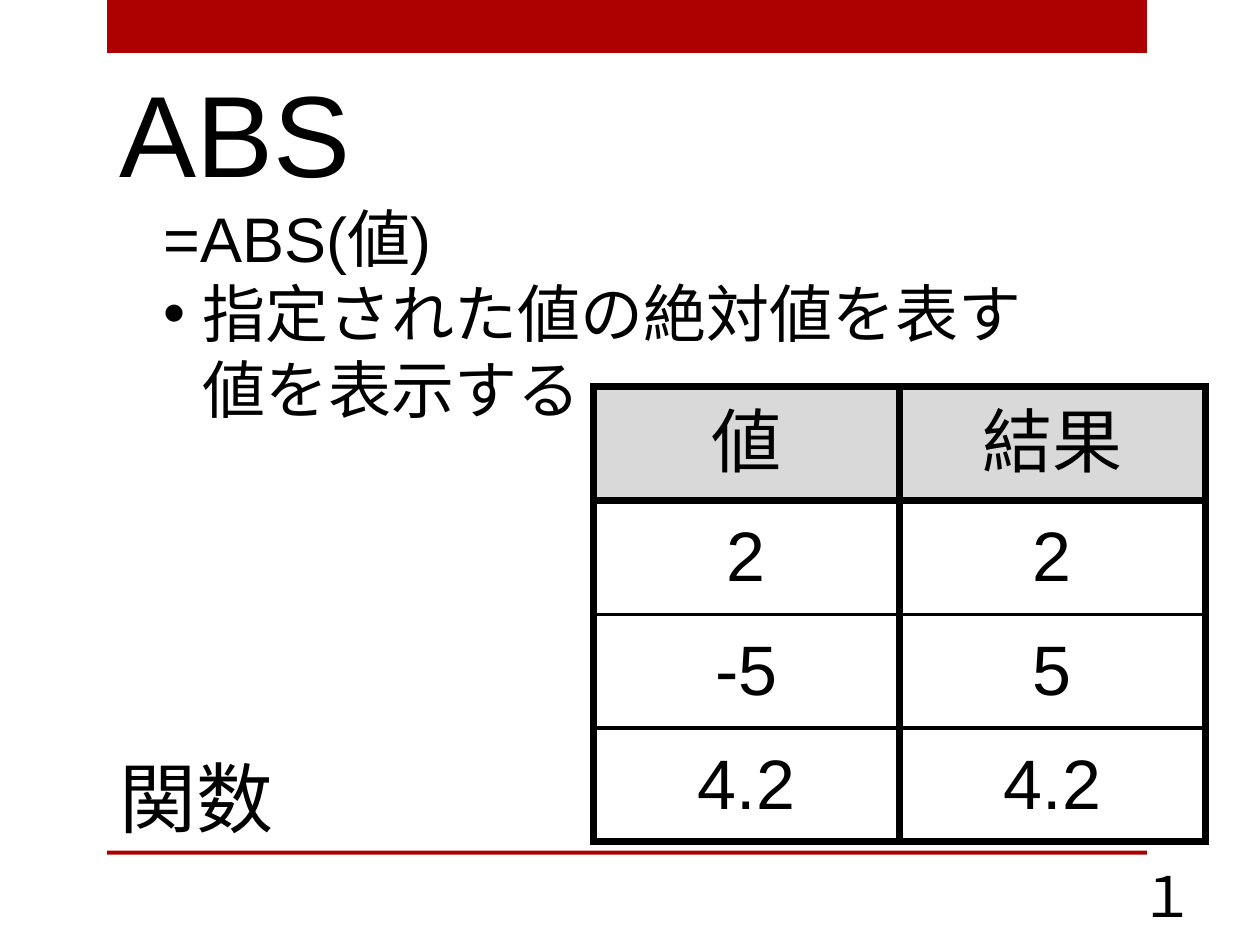
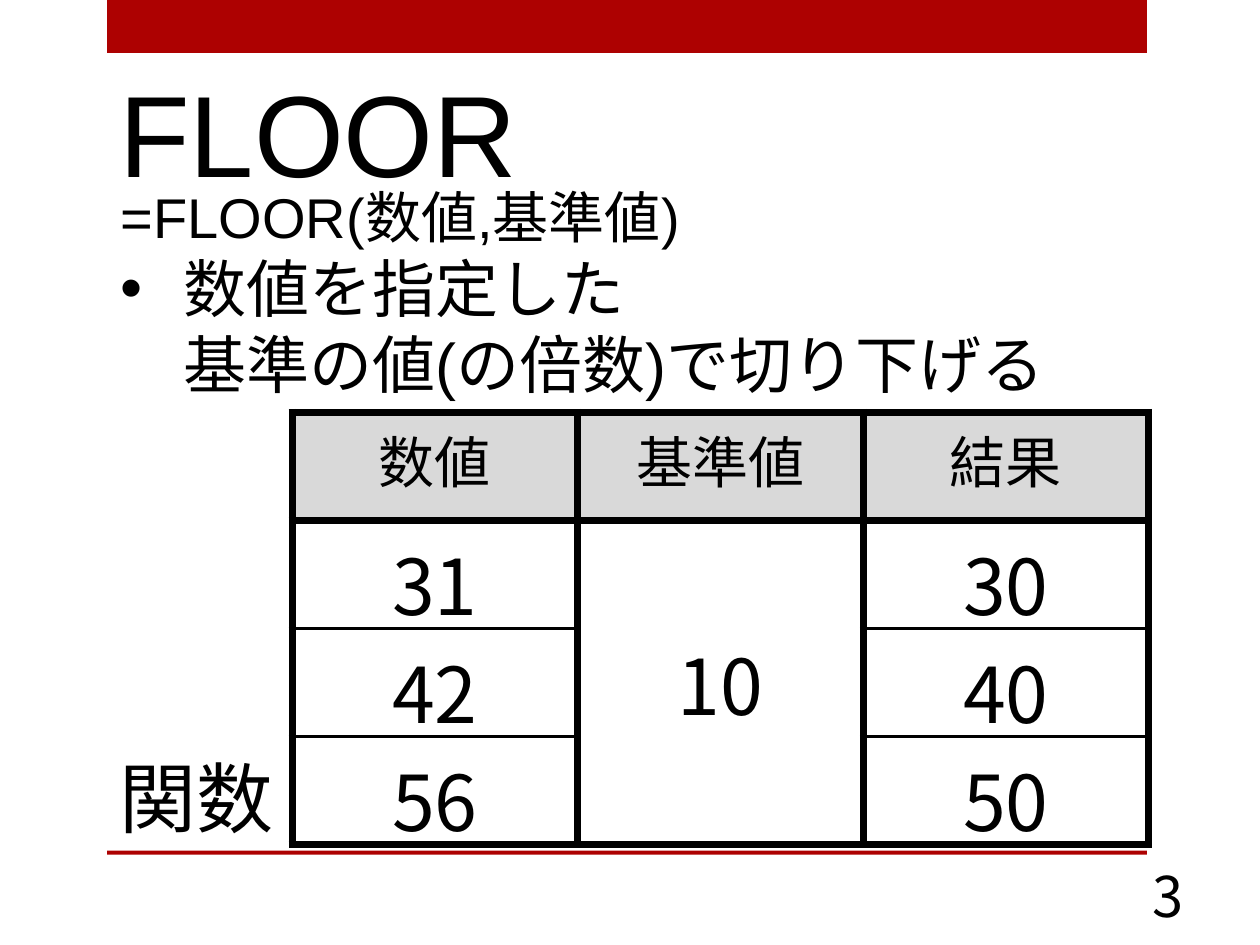
import pptx
import pptx.util
import pptx.dml.color
import pptx.enum.shapes
import pptx.enum.text
import pptx.oxml
import pptx.oxml.ns
from pptx.util import Cm

COLOURS = {"red": "AD0101", "ink": "000000", "header": "D9D9D9", "paper": "FFFFFF"}
ARIAL = "Arial"
NOTO = "Noto Sans CJK JP"
MIDDLE = pptx.enum.text.MSO_ANCHOR.MIDDLE
TOP = pptx.enum.text.MSO_ANCHOR.TOP
THICK, THIN = 4.5, 2.25
BAND_LEFT, BAND_WIDTH = 2.16, 20.96


def colour(name):
    return pptx.dml.color.RGBColor.from_string(COLOURS[name])


def add_xml(parent, tag, **attributes):
    child = pptx.oxml.ns.qn(tag)
    element = parent.makeelement(child, attributes)
    parent.append(element)
    return element


class FunctionDeck:
    def __init__(self):
        self.deck = pptx.Presentation()
        self.deck.slide_width, self.deck.slide_height = Cm(25.4), Cm(19.05)
        self.slide = None

    def start(self, function_name, page):
        """Add a slide with the bands, title, section label and page number."""
        self.slide = self.deck.slides.add_slide(self.deck.slide_layouts[6])
        self.band(0, 1.07)
        self.band(17.15, 0.08)
        self.text(function_name, (BAND_LEFT, 1.12, 12, 3.07), 66, ARIAL)
        self.text("関数", (BAND_LEFT, 15.01, 3.73, 2.13), 44, NOTO)
        number = self.text(page, (21.69, 17.25, 3.71, 1.63), 32, NOTO)
        number.alignment = pptx.enum.text.PP_ALIGN.CENTER

    def band(self, top, height):
        band = self.slide.shapes.add_shape(
            pptx.enum.shapes.MSO_SHAPE.RECTANGLE,
            Cm(BAND_LEFT), Cm(top), Cm(BAND_WIDTH), Cm(height))
        band.shadow.inherit = False
        band.fill.solid()
        band.fill.fore_color.rgb = colour("red")
        band.line.fill.background()

    def style(self, paragraph, size, font):
        for run in paragraph.runs:
            run.font.size = pptx.util.Pt(size)
            run.font.name = font
            run.font.color.rgb = colour("ink")
            add_xml(run.font._element, "a:ea", typeface=font)

    def text(self, words, place, size, font):
        """Add a text box and return its first paragraph."""
        box = self.slide.shapes.add_textbox(*map(Cm, place))
        box.text_frame.word_wrap = True
        paragraph = box.text_frame.paragraphs[0]
        paragraph.text = words
        self.style(paragraph, size, font)
        return paragraph

    def syntax(self, formula, formula_size, meaning, place, indent):
        """Add the formula with one bulleted explanation below it."""
        heading = self.text(formula, place, formula_size, ARIAL)
        explanation = heading._parent.add_paragraph()
        explanation.text = meaning
        self.style(explanation, 36, ARIAL)
        properties = explanation._p.get_or_add_pPr()
        properties.set("marL", str(Cm(indent)))
        properties.set("indent", str(-Cm(indent)))
        add_xml(properties, "a:buFont", typeface=ARIAL)
        add_xml(properties, "a:buChar", char="•")

    def border(self, cell, top, bottom):
        properties = cell._tc.get_or_add_tcPr()
        sides = {"a:lnL": THICK, "a:lnR": THICK, "a:lnT": top, "a:lnB": bottom}
        for position, (tag, width) in enumerate(sides.items()):
            line = properties.makeelement(
                pptx.oxml.ns.qn(tag), {"w": str(pptx.util.Pt(width))})
            fill = add_xml(line, "a:solidFill")
            add_xml(fill, "a:srgbClr", val=COLOURS["ink"])
            properties.insert(position, line)

    def examples(self, rows, place, sizes, font, anchors, merged_column=None):
        """Add the table of sample values; sizes are for header and body."""
        last = len(rows) - 1
        table = self.slide.shapes.add_table(
            len(rows), len(rows[0]), *map(Cm, place)).table
        table.first_row = table.horz_banding = False
        for r, row in enumerate(rows):
            for c, value in enumerate(row):
                cell = table.cell(r, c)
                cell.fill.solid()
                cell.fill.fore_color.rgb = colour("paper" if r else "header")
                cell.vertical_anchor = anchors[c] if r else anchors[0]
                paragraph = cell.text_frame.paragraphs[0]
                paragraph.text = value
                paragraph.alignment = pptx.enum.text.PP_ALIGN.CENTER
                self.style(paragraph, sizes[min(r, 1)], font)
                whole = c == merged_column
                self.border(cell,
                            THICK if whole or r < 2 else THIN,
                            THICK if whole or r in (0, last) else THIN)
        if merged_column is not None:
            table.cell(1, merged_column).merge(table.cell(last, merged_column))


def main():
    deck = FunctionDeck()

    deck.start("ABS", "１")
    deck.syntax("=ABS(値)", 36, "指定された値の絶対値を表す\v値を表示する",
                (3.05, 3.89, 20.68, 6.4), 0.79)
    deck.examples([("値", "結果"), ("2", "2"), ("-5", "5"), ("4.2", "4.2")],
                  (11.96, 7.8, 12.34, 9.17), (40, 40), ARIAL, (MIDDLE, MIDDLE))

    deck.start("FLOOR", "3")
    deck.syntax("=FLOOR(数値,基準値)", 32,
                "数値を指定した\v基準の値(の倍数)で切り下げる",
                (2.18, 3.56, 20.68, 7.77), 1.27)
    deck.examples([("数値", "基準値", "結果"), ("31", "10", "30"),
                   ("42", "", "40"), ("56", "", "50")],
                  (5.89, 8.31, 17.27, 8.71), (32, 44), NOTO,
                  (TOP, MIDDLE, MIDDLE), merged_column=1)

    deck.deck.save("out.pptx")


if __name__ == "__main__":
    main()
